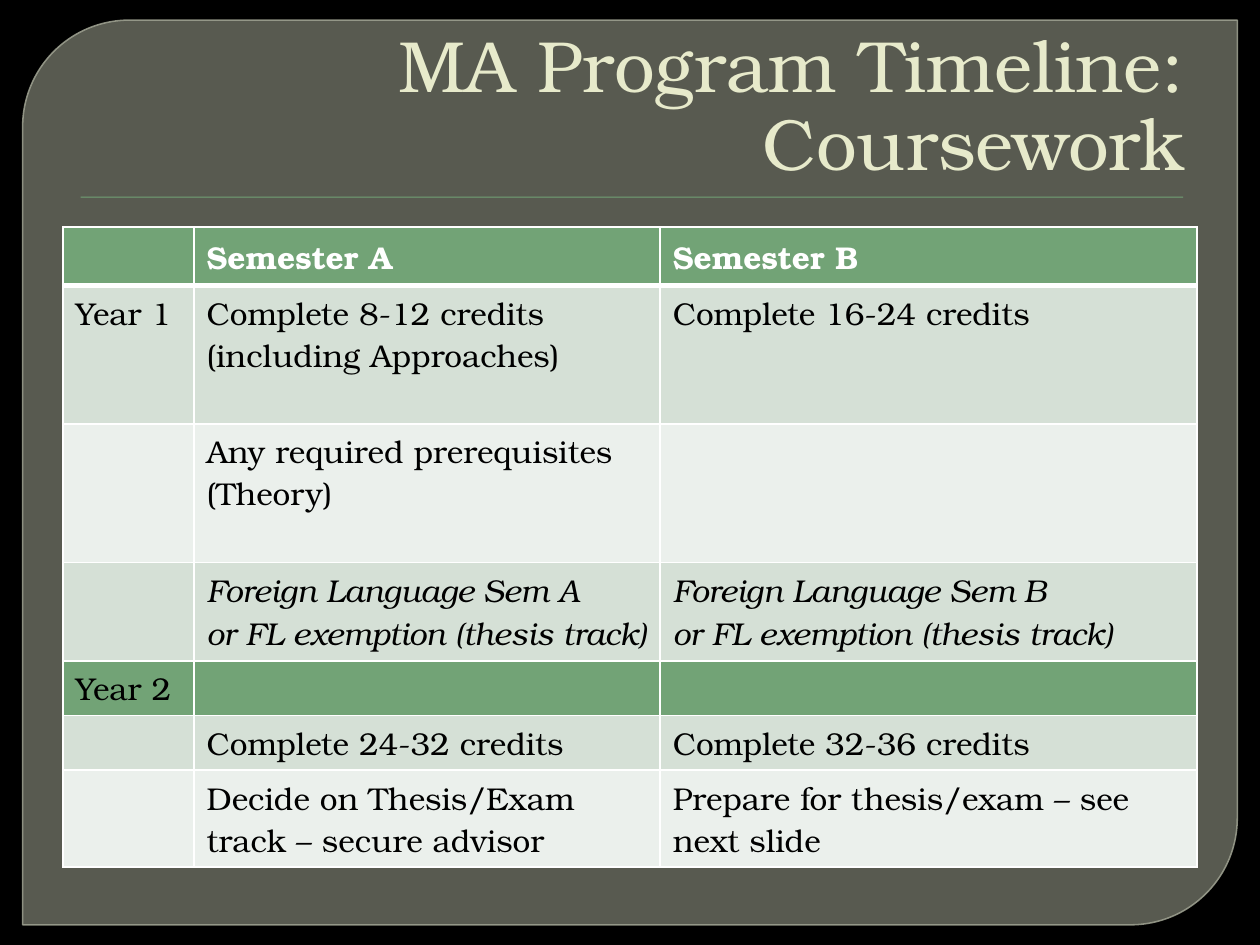
import pptx
import pptx.dml.color
import pptx.enum.shapes
import pptx.enum.text
import pptx.oxml.ns
import pptx.util
from lxml import etree

Inches, Pt, qn = pptx.util.Inches, pptx.util.Pt, pptx.oxml.ns.qn
SHAPES = pptx.enum.shapes.MSO_SHAPE

FONT = "TeX Gyre Bonum"
GREEN, PALE, PALEST, WHITE, BLACK = "72A376", "D5E0D6", "EBF0EC", "FFFFFF", "000000"

TITLE = "MA Program Timeline: Coursework"
COLUMN_WIDTHS = [1.04, 3.7, 4.26]
# Row height, fill, cell texts (a newline starts a new paragraph)
ROWS = [
    (0.46, GREEN, ["", "Semester A", "Semester B"]),
    (1.1, PALE, ["Year 1", "Complete 8-12 credits (including Approaches)",
                 "Complete 16-24 credits"]),
    (1.1, PALEST, ["", "Any required prerequisites (Theory)", ""]),
    (0.78, PALE, ["", "Foreign Language Sem A\nor FL exemption (thesis track)",
                  "Foreign Language Sem B\nor FL exemption (thesis track)"]),
    (0.43, GREEN, ["Year 2", "", ""]),
    (0.43, PALE, ["", "Complete 24-32 credits", "Complete 32-36 credits"]),
    (0.77, PALEST, ["", "Decide on Thesis/Exam track – secure advisor",
                    "Prepare for thesis/exam – see next slide"]),
]
HEADER_ROW, ITALIC_ROW = 0, 3


def set_color(target, value):
    """Colour a fill, or the fore colour of a line or font."""
    if isinstance(target, pptx.dml.fill.FillFormat):
        target.solid()
        target = target.fore_color
    target.rgb = pptx.dml.color.RGBColor.from_string(value)


def set_opacity(shape, *percents):
    """Give each colour of the shape, fill first, its opacity."""
    for color, percent in zip(shape.element.spPr.iter(qn("a:srgbClr")), percents):
        etree.SubElement(color, qn("a:alpha"), val=str(percent * 1000))


def set_borders(cell, widths):
    properties = cell._tc.get_or_add_tcPr()
    for side, width in widths.items():
        line = etree.SubElement(properties, qn(f"a:ln{side}"), w=str(Pt(width)))
        fill = etree.SubElement(line, qn("a:solidFill"))
        etree.SubElement(fill, qn("a:srgbClr"), val=WHITE)


def add_backdrop(slide, kind, left, top, width, height, color):
    """Add a filled shape behind the title."""
    shape = slide.shapes.add_shape(
        kind, Inches(left), Inches(top), Inches(width), Inches(height))
    shape.shadow.inherit = False
    set_color(shape.fill, color)
    shape.line.fill.background()
    slide.shapes.title.element.addprevious(shape.element)
    return shape


def add_title(slide):
    title = slide.shapes.title
    title.left, title.top = Inches(0.5), Inches(0.28)
    title.width, title.height = Inches(9), Inches(1.25)
    frame = title.text_frame
    frame.text = TITLE
    frame.word_wrap = True
    frame.auto_size = pptx.enum.text.MSO_AUTO_SIZE.NONE
    frame.vertical_anchor = pptx.enum.text.MSO_ANCHOR.BOTTOM
    paragraph = frame.paragraphs[0]
    paragraph.alignment = pptx.enum.text.PP_ALIGN.RIGHT
    paragraph.line_spacing = 0.9
    paragraph.font.name, paragraph.font.size = FONT, Pt(41.4)
    set_color(paragraph.font.color, "E7EACB")


def add_timeline(slide):
    height = sum(row[0] for row in ROWS)
    table = slide.shapes.add_table(
        len(ROWS), len(COLUMN_WIDTHS), Inches(0.5), Inches(1.8),
        Inches(sum(COLUMN_WIDTHS)), Inches(height)).table
    for column, width in zip(table.columns, COLUMN_WIDTHS):
        column.width = Inches(width)
    for row_index, (height, fill, texts) in enumerate(ROWS):
        table.rows[row_index].height = Inches(height)
        is_header = row_index == HEADER_ROW
        widths = {"L": 1, "R": 1, "T": 3 if row_index == HEADER_ROW + 1 else 1,
                  "B": 3 if is_header else 1}
        for column_index, text in enumerate(texts):
            cell = table.cell(row_index, column_index)
            set_borders(cell, widths)
            set_color(cell.fill, fill)
            cell.text = text
            for paragraph in cell.text_frame.paragraphs:
                font = paragraph.font
                font.name, font.size = FONT, Pt(18)
                font.bold, font.italic = is_header, row_index == ITALIC_ROW
                set_color(font.color, WHITE if is_header else BLACK)


def main():
    presentation = pptx.Presentation()
    presentation.slide_width, presentation.slide_height = Inches(10), Inches(7.5)
    slide = presentation.slides.add_slide(presentation.slide_layouts[5])
    set_color(slide.background.fill, BLACK)

    panel = add_backdrop(slide, SHAPES.ROUND_2_DIAG_RECTANGLE,
                         0.18, 0.16, 9.64, 7.18, "888B7B")
    panel.adjustments[0], panel.adjustments[1] = 0.118, 0
    set_color(panel.line.fill, "9DA090")
    panel.line.width = Pt(0.87)
    set_opacity(panel, 65, 88)
    add_backdrop(slide, SHAPES.RECTANGLE, 0.64, 1.56, 8.75, 0.01, GREEN)

    add_title(slide)
    add_timeline(slide)
    presentation.save("out.pptx")


if __name__ == "__main__":
    main()
